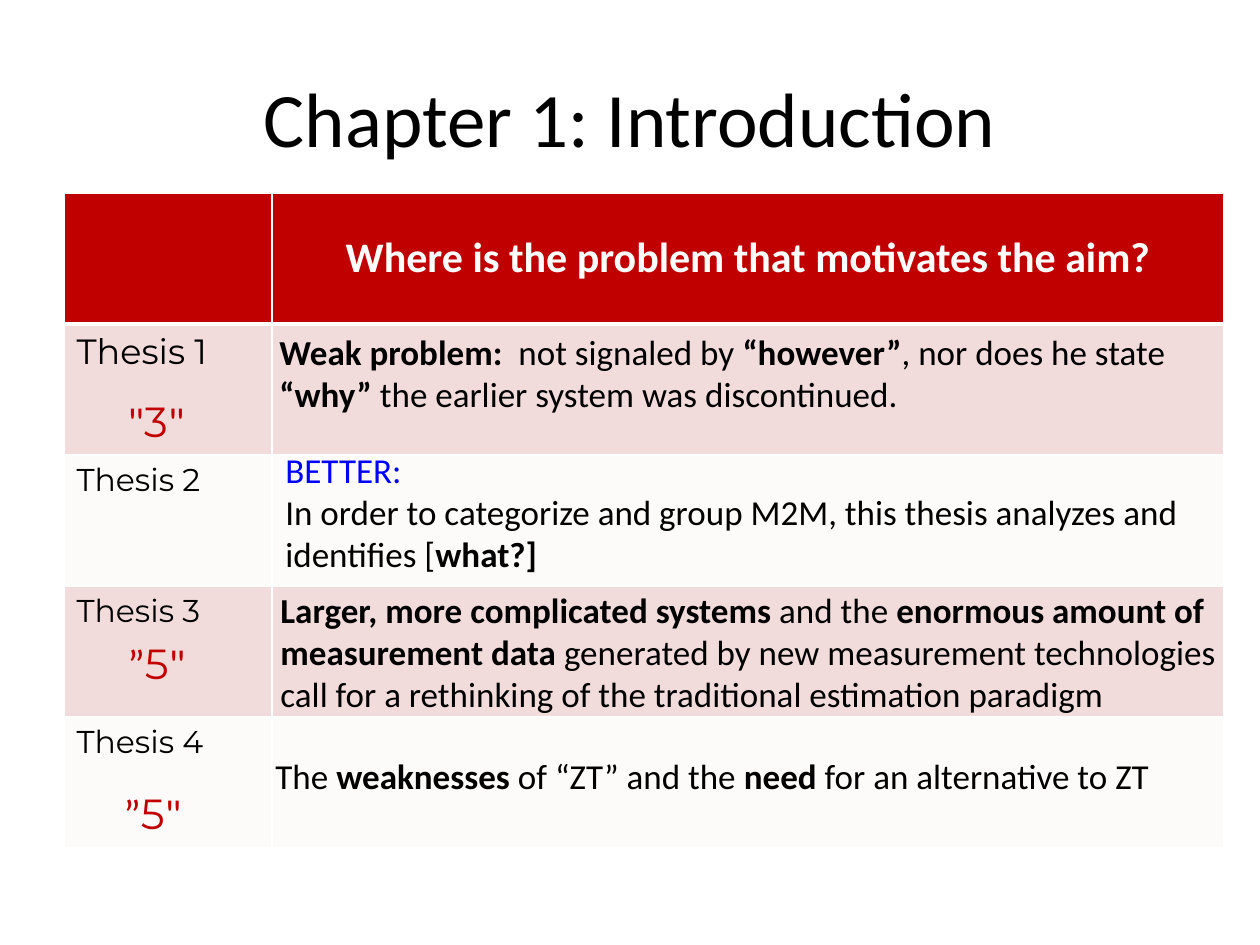
import dataclasses

import lxml.etree
import pptx
import pptx.dml.color
import pptx.enum.text
import pptx.oxml.ns
import pptx.util

PX_PER_INCH = 126
ALIGN = pptx.enum.text.PP_ALIGN
ANCHOR = pptx.enum.text.MSO_ANCHOR


@dataclasses.dataclass(frozen=True)
class Theme:
    body_font: str = "Calibri"
    label_font: str = "Montserrat"
    ink: str = "000000"
    paper: str = "FFFFFF"
    red: str = "C00000"
    blue: str = "0000FF"
    pink: str = "F2DCDB"
    ivory: str = "FCFBF9"
    title_size: int = 44
    heading_size: int = 24
    body_size: int = 20
    label_size: int = 18
    rule: int = 1
    heavy_rule: int = 3


THEME = Theme()

COLUMNS = (208, 952)
ROW_HEIGHT = 131
THESES = ("Thesis 1", "Thesis 2", "Thesis 3", "Thesis 4")

FINDINGS = (
    ((267, 324, 963, 97), [[
        ("Weak problem:  ", {"bold": True}),
        ("not signaled by ", {}),
        ("“however”", {"bold": True}),
        (", nor does he state ", {}),
        ("“why” ", {"bold": True}),
        ("the earlier system was discontinued.", {}),
    ]]),
    ((273, 442, 951, 174), [
        [("BETTER:", {"color": THEME.blue})],
        [
            ("In order to categorize and group M2M, this thesis analyzes and identifies [", {}),
            ("what?]", {"bold": True}),
        ],
    ]),
    ((268, 582, 961, 140), [[
        ("Larger, more complicated systems", {"bold": True}),
        (" and the ", {}),
        ("enormous amount of measurement data", {"bold": True}),
        (" generated by new measurement technologies call for a rethinking"
         " of the traditional estimation paradigm", {}),
    ]]),
    ((263, 748, 951, 55), [[
        ("The ", {}),
        ("weaknesses", {"bold": True}),
        (" of “ZT” and the ", {}),
        ("need", {"bold": True}),
        (" for an alternative to ZT", {}),
    ]]),
)

GRADES = (
    ((115, 389, 83, 63), '"', "3"),
    ((115, 631, 83, 63), "”", "5"),
    ((111, 781, 83, 63), "”", "5"),
)


def px(length):
    return pptx.util.Emu(round(length * 914400 / PX_PER_INCH))


def rgb(color):
    return pptx.dml.color.RGBColor.from_string(color)


def add_text(paragraph, text, size=THEME.body_size, font=THEME.body_font,
             color=THEME.ink, bold=False, align=None):
    run = paragraph.add_run()
    run.text = text
    run.font.size = pptx.util.Pt(size)
    run.font.name = font
    run.font.bold = bold
    run.font.color.rgb = rgb(color)
    if align is not None:
        paragraph.alignment = align


def add_title(slide, box):
    title = slide.shapes.title
    title.left, title.top, title.width, title.height = map(px, box)
    title.text_frame.vertical_anchor = ANCHOR.MIDDLE
    add_text(title.text_frame.paragraphs[0], "Chapter 1: Introduction",
             size=THEME.title_size, align=ALIGN.CENTER)


def set_borders(cell, **widths):
    properties = cell._tc.get_or_add_tcPr()
    for side in "LRTB":
        line = lxml.etree.SubElement(properties, pptx.oxml.ns.qn(f"a:ln{side}"))
        line.set("w", str(pptx.util.Pt(widths.get(side, THEME.rule))))
        fill = lxml.etree.SubElement(line, pptx.oxml.ns.qn("a:solidFill"))
        color = lxml.etree.SubElement(fill, pptx.oxml.ns.qn("a:srgbClr"))
        color.set("val", THEME.paper)


def style_cell(cell, fill, **widths):
    set_borders(cell, **widths)
    cell.fill.solid()
    cell.fill.fore_color.rgb = rgb(fill)


def add_comparison(slide, left, top):
    row_count = len(THESES) + 1
    comparison = slide.shapes.add_table(
        row_count, len(COLUMNS), px(left), px(top),
        px(sum(COLUMNS)), px(ROW_HEIGHT * row_count)).table
    for column, width in zip(comparison.columns, COLUMNS):
        column.width = px(width)
    for row in comparison.rows:
        row.height = px(ROW_HEIGHT)

    for cell in comparison.rows[0].cells:
        style_cell(cell, THEME.red, B=THEME.heavy_rule)
    question = comparison.cell(0, 1)
    question.vertical_anchor = ANCHOR.MIDDLE
    add_text(question.text_frame.paragraphs[0],
             "Where is the problem that motivates the aim?",
             size=THEME.heading_size, color=THEME.paper, bold=True, align=ALIGN.CENTER)

    for number, thesis in enumerate(THESES, 1):
        top_rule = THEME.heavy_rule if number == 1 else THEME.rule
        for cell in comparison.rows[number].cells:
            style_cell(cell, THEME.pink if number % 2 else THEME.ivory, T=top_rule)
        add_text(comparison.cell(number, 0).text_frame.paragraphs[0], thesis,
                 size=THEME.body_size if number == 1 else THEME.label_size,
                 font=THEME.label_font)


def add_note(slide, box, paragraphs, wrap=True):
    frame = slide.shapes.add_textbox(*map(px, box)).text_frame
    frame.word_wrap = wrap
    frame.auto_size = pptx.enum.text.MSO_AUTO_SIZE.SHAPE_TO_FIT_TEXT
    for index, runs in enumerate(paragraphs):
        paragraph = frame.add_paragraph() if index else frame.paragraphs[0]
        for text, style in runs:
            add_text(paragraph, text, **style)


def add_grade(slide, box, opening, grade):
    style = {"size": THEME.heading_size, "color": THEME.red}
    runs = [
        (opening, style),
        (grade, {**style, "font": THEME.label_font}),
        ('"', style),
    ]
    add_note(slide, box, [runs], wrap=False)


def main():
    deck = pptx.Presentation()
    deck.slide_width, deck.slide_height = px(1260), px(945)
    slide = deck.slides.add_slide(deck.slide_layouts[5])
    add_title(slide, (63, 38, 1134, 157))
    add_comparison(slide, 64, 193)
    for box, paragraphs in FINDINGS:
        add_note(slide, box, paragraphs)
    for box, opening, grade in GRADES:
        add_grade(slide, box, opening, grade)
    deck.save("out.pptx")


if __name__ == "__main__":
    main()
